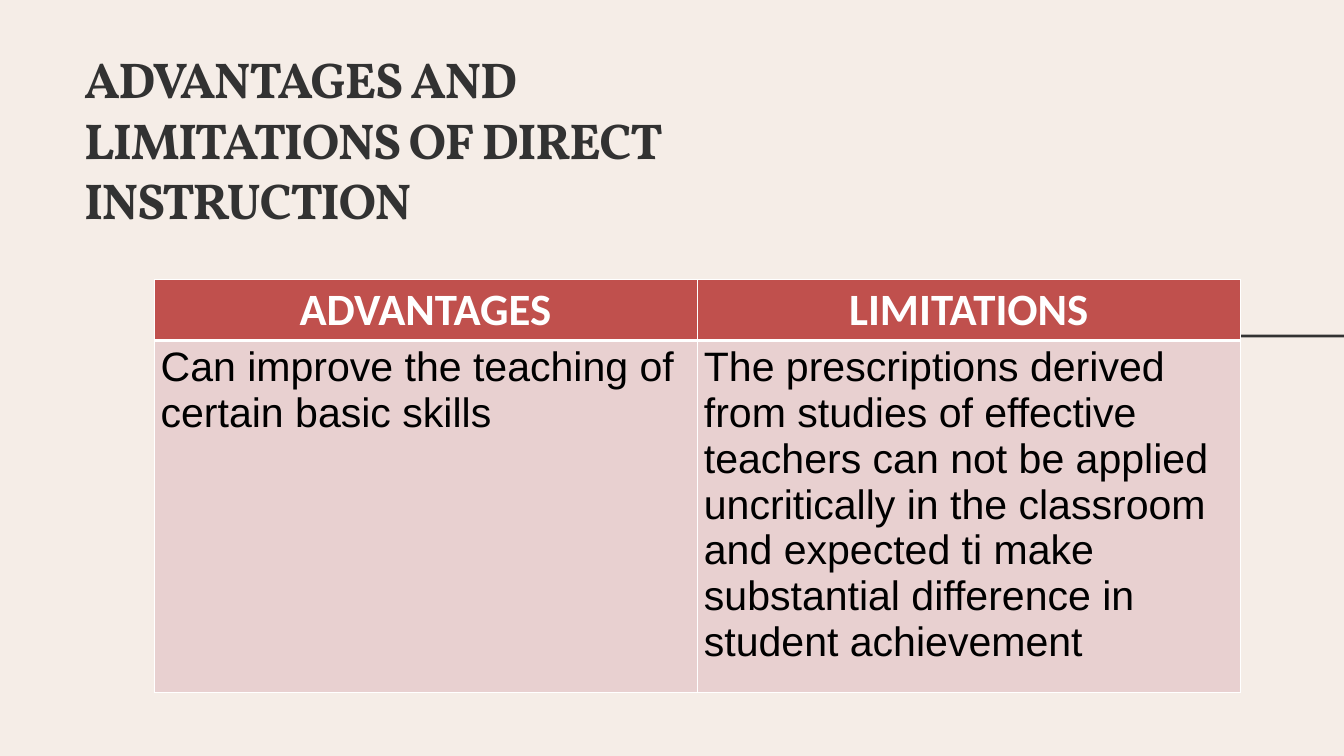
import pptx
import pptx.util
import pptx.dml.color
import pptx.enum.shapes
import pptx.enum.text
import pptx.oxml
import pptx.oxml.ns

theme = {
    "paper": "F5EDE7", "ink": "323232", "head": "C0504D", "body": "E8D0D0",
    "white": "FFFFFF", "black": "000000",
    "title": 54, "label": 48, "text": 44,
}
Pt = pptx.util.Pt
deck = pptx.Presentation()
col = pptx.util.Inches(1)
wide, high = 20 * col, int(11.25 * col)
deck.slide_width, deck.slide_height = wide, high
slide = deck.slides.add_slide(deck.slide_layouts[6])


def block(x, y, w, h, tint):
    shape = slide.shapes.add_shape(
        pptx.enum.shapes.MSO_SHAPE.RECTANGLE, int(x), int(y), int(w), int(h))
    shape.shadow.inherit = False
    shape.fill.solid()
    shape.fill.fore_color.rgb = pptx.dml.color.RGBColor.from_string(theme[tint])
    shape.line.fill.background()


def style(para, face, size, tint, bold):
    para.font.name = face
    para.font.size = Pt(theme[size])
    para.font.bold = bold
    para.font.color.rgb = pptx.dml.color.RGBColor.from_string(theme[tint])


block(0, 0, wide, high, "paper")

box = slide.shapes.add_textbox(
    int(1.25 * col), int(0.71 * col), int(9.25 * col), int(2.74 * col))
frame = box.text_frame
frame.word_wrap = True
frame.margin_left = frame.margin_right = frame.margin_bottom = 0
frame.margin_top = int(0.01 * col)
title = frame.paragraphs[0]
title.text = "ADVANTAGES AND LIMITATIONS OF DIRECT INSTRUCTION"
title.space_before = Pt(1)
style(title, "Vollkorn", "title", "ink", True)
title.runs[0].font._element.set("spc", "-150")

left, top, span = 2.29 * col, 4.16 * col, 16.17 * col
edge = left + span
block(edge, 4.98 * col, wide - edge, 0.04 * col, "ink")

rows = [
    ("ADVANTAGES", "LIMITATIONS"),
    ("Can improve the teaching of certain basic skills",
     "The prescriptions derived from studies of effective teachers can not be "
     "applied uncritically in the classroom and expected ti make substantial "
     "difference in student achievement"),
]
looks = [
    ("head", "Calibri", "label", "white", True, {"L": 1, "R": 1, "T": 1, "B": 3}),
    ("body", "Arial", "text", "black", False, {"L": 1, "R": 1, "T": 3, "B": 1}),
]
tall = [0.91 * col, 5.22 * col]
table = slide.shapes.add_table(
    2, 2, int(left), int(top), int(span), int(sum(tall))).table
for r, (words, look) in enumerate(zip(rows, looks)):
    fill, face, size, tint, bold, rims = look
    table.rows[r].height = int(tall[r])
    for c, word in enumerate(words):
        cell = table.cell(r, c)
        cell.text = word
        para = cell.text_frame.paragraphs[0]
        style(para, face, size, tint, bold)
        if r == 0:
            para.alignment = pptx.enum.text.PP_ALIGN.CENTER
        props = cell._tc.get_or_add_tcPr()
        for side, width in rims.items():
            props.append(pptx.oxml.parse_xml(
                f'<a:ln{side} {pptx.oxml.ns.nsdecls("a")} w="{Pt(width)}">'
                f'<a:solidFill><a:srgbClr val="{theme["white"]}"/></a:solidFill>'
                f'</a:ln{side}>'))
        cell.fill.solid()
        cell.fill.fore_color.rgb = pptx.dml.color.RGBColor.from_string(theme[fill])

deck.save("out.pptx")
